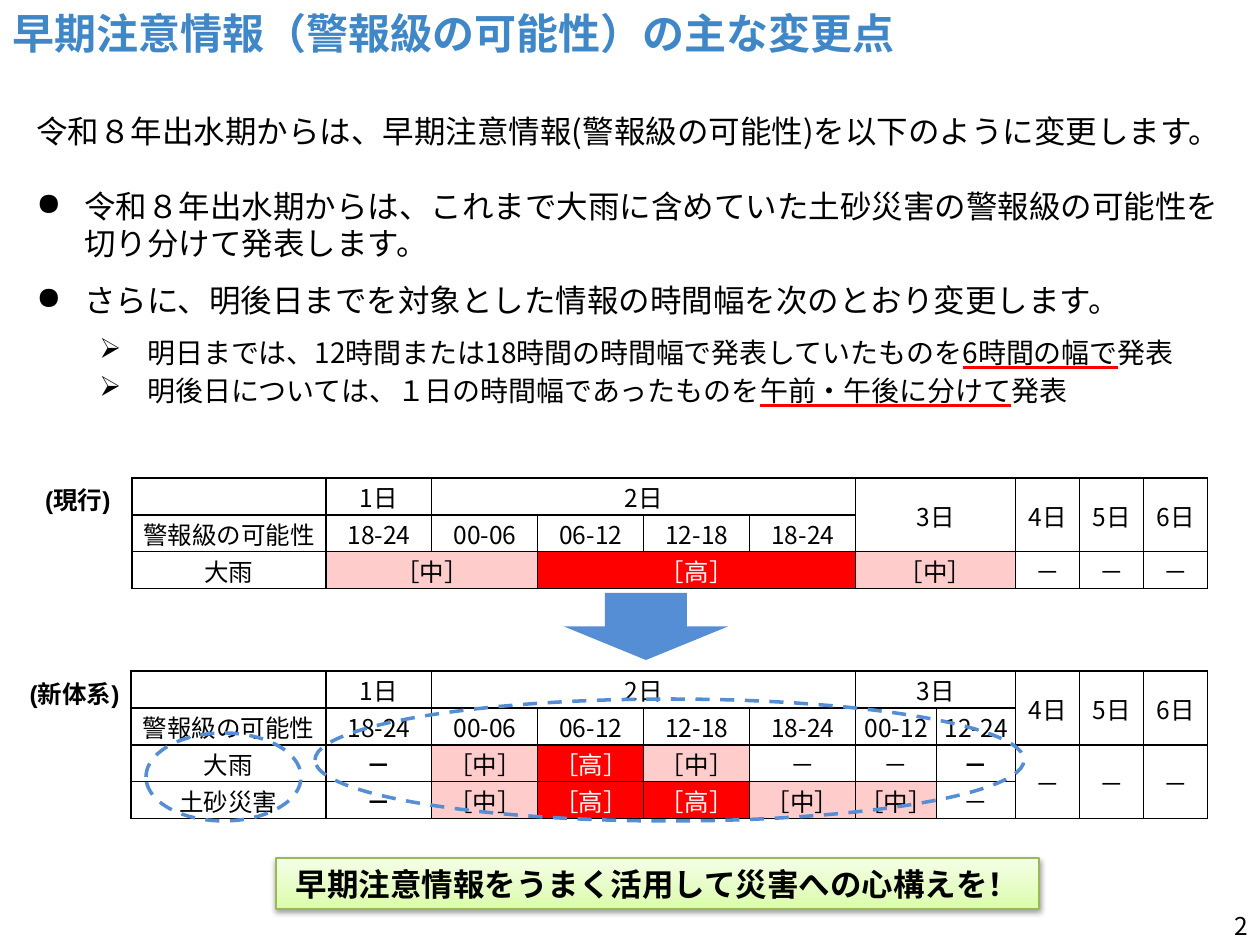
from lxml.etree import SubElement
from pptx import Presentation
from pptx.dml.color import RGBColor
from pptx.enum.dml import MSO_LINE
from pptx.enum.shapes import MSO_SHAPE
from pptx.enum.text import MSO_ANCHOR, MSO_AUTO_SIZE, MSO_UNDERLINE, PP_ALIGN
from pptx.oxml.ns import qn
from pptx.util import Emu, Pt

COLORS = {
    "title": "4087C8", "ink": "000000", "white": "FFFFFF", "blue": "558ED5",
    "red": "FF0000", "pink": "FFCCCC", "edge": "98B955",
}
GREENS = [(0, "DAFDA7"), (35, "E4FCC2"), (100, "F5FFE7")]
LEVELS = {"［中］": ("pink", "ink"), "［高］": ("red", "white")}
FONT = "Noto Sans CJK JP"


def px(n):
    return Emu(round(n * 914400 / 126))


def rgb(name):
    return RGBColor.from_string(COLORS[name])


def sub(node, tag, **attrs):
    return SubElement(node, qn(tag), **attrs)


class Deck:
    def __init__(self):
        self.prs = Presentation()
        self.prs.slide_width, self.prs.slide_height = px(1260), px(945)
        self.slide = self.prs.slides.add_slide(self.prs.slide_layouts[5])

    def run(self, para, text, size, color="ink", bold=False, font=FONT, mark=False):
        run = para.add_run()
        run.text = text
        style = run.font
        style.size, style.bold, style.name = Pt(size), bold, font
        style.color.rgb = rgb(color)
        latin = run._r.rPr.find(qn("a:latin"))
        ea = sub(run._r.rPr, "a:ea", typeface=font)
        latin.addnext(ea)
        if mark:
            style.underline = MSO_UNDERLINE.HEAVY_LINE
            fill = sub(run._r.rPr, "a:uFill")
            sub(sub(fill, "a:solidFill"), "a:srgbClr", val=COLORS["red"])
            latin.addprevious(fill)

    def title(self, text, x, y, w, h):
        box = self.slide.shapes.title
        box.left, box.top, box.width, box.height = map(px, (x, y, w, h))
        frame = box.text_frame
        frame.auto_size = MSO_AUTO_SIZE.NONE
        frame.vertical_anchor = MSO_ANCHOR.MIDDLE
        para = frame.paragraphs[0]
        para.alignment = PP_ALIGN.LEFT
        self.run(para, text, 24, "title", True)

    def box(self, x, y, w, h):
        frame = self.slide.shapes.add_textbox(*map(px, (x, y, w, h))).text_frame
        frame.word_wrap = True
        return frame

    def label(self, text, x, y, w, h, **style):
        para = self.box(x, y, w, h).paragraphs[0]
        para.alignment = PP_ALIGN.RIGHT
        self.run(para, text, 14, **style)

    def body(self, x, y, w, h, items):
        frame = self.box(x, y, w, h)
        for i, (bullet, level, size, gap, runs) in enumerate(items):
            para = frame.add_paragraph() if i else frame.paragraphs[0]
            if bullet:
                props = para._p.get_or_add_pPr()
                props.set("marL", str(px(48 + 63 * level)))
                props.set("indent", str(px(-48)))
                sub(props, "a:buChar", char=bullet)
            para.level = level
            para.line_spacing = Pt(21)
            para.space_before = Pt(gap)
            for text, mark in runs:
                self.run(para, text, size, mark=mark)

    def cell(self, cell, text, bold):
        cell.margin_left = cell.margin_right = cell.margin_top = px(1)
        cell.margin_bottom = 0
        cell.vertical_anchor = MSO_ANCHOR.MIDDLE
        para = cell.text_frame.paragraphs[0]
        para.alignment = PP_ALIGN.CENTER
        fill, ink = LEVELS.get(text, (None, "ink"))
        if text:
            self.run(para, text, 14, ink, bold)
        else:
            sub(para._p, "a:endParaRPr", sz="1400")
        if fill:
            cell.fill.solid()
            cell.fill.fore_color.rgb = rgb(fill)
        else:
            cell.fill.background()
        props = cell._tc.get_or_add_tcPr()
        for i, side in enumerate("LRTB"):
            line = sub(props, "a:ln" + side, w=str(Pt(0.75)))
            sub(sub(line, "a:solidFill"), "a:srgbClr", val=COLORS["ink"])
            props.insert(i, line)

    def table(self, x, y, cols, rows, spans, bold=()):
        frame = self.slide.shapes.add_table(
            len(rows), len(cols), px(x), px(y), px(sum(cols)), px(37 * len(rows)))
        table = frame.table
        table.first_row = table.horz_banding = False
        for col, width in zip(table.columns, cols):
            col.width = px(width)
        for r, row in enumerate(rows):
            table.rows[r].height = px(37)
            for c, text in enumerate(row):
                self.cell(table.cell(r, c), text, (r, c) in bold)
        for top, left, bottom, right in spans:
            table.cell(top, left).merge(table.cell(bottom, right))

    def shape(self, kind, x, y, w, h, fill=None, line=None, width=2, dash=None):
        shape = self.slide.shapes.add_shape(kind, *map(px, (x, y, w, h)))
        shape.shadow.inherit = False
        if fill:
            shape.fill.solid()
            shape.fill.fore_color.rgb = rgb(fill)
        else:
            shape.fill.background()
        if line:
            shape.line.color.rgb = rgb(line)
            shape.line.width = Pt(width)
            shape.line.dash_style = dash
        else:
            shape.line.fill.background()
        return shape

    def banner(self, text, x, y, w, h):
        shape = self.shape(MSO_SHAPE.RECTANGLE, x, y, w, h, line="edge", width=0.75)
        shape.fill.gradient()
        shape.fill.gradient_angle = 90
        props = shape._element.spPr
        stops = props.find(qn("a:gradFill")).find(qn("a:gsLst"))
        for stop in list(stops):
            stops.remove(stop)
        for pos, color in GREENS:
            stop = sub(stops, "a:gs", pos=str(pos * 1000))
            sub(stop, "a:srgbClr", val=color)
        shade = sub(props.find(qn("a:effectLst")), "a:outerShdw", blurRad=str(Pt(3.1)),
                    dist=str(Pt(1.6)), dir="5400000", rotWithShape="0")
        sub(sub(shade, "a:srgbClr", val=COLORS["ink"]), "a:alpha", val="38000")
        frame = shape.text_frame
        frame.word_wrap = True
        frame.vertical_anchor = MSO_ANCHOR.MIDDLE
        para = frame.paragraphs[0]
        para.alignment = PP_ALIGN.CENTER
        self.run(para, text, 18, bold=True)


def main():
    deck = Deck()
    deck.title("早期注意情報（警報級の可能性）の主な変更点", 0, 0, 971, 66)

    # Current and new tables
    days = ["4日", "5日", "6日"]
    hours = ["警報級の可能性", "18-24", "00-06", "06-12", "12-18", "18-24"]
    head = ["", "1日", "2日", "", "", "", "3日"]
    deck.table(132, 478, [194] + [106] * 5 + [160] + [64] * 3, [
        head + days,
        hours + [""] * 4,
        ["大雨", "［中］", "", "［高］", "", "", "［中］"] + ["－"] * 3,
    ], [(0, 2, 0, 5), (2, 1, 2, 2), (2, 3, 2, 5)] + [(0, c, 1, c) for c in range(6, 10)])
    deck.table(131, 671, [195] + [106] * 5 + [81, 79] + [64] * 3, [
        head + [""] + days,
        hours + ["00-12", "12-24"] + [""] * 3,
        ["大雨", "－", "［中］", "［高］", "［中］"] + ["－"] * 6,
        ["土砂災害", "－", "［中］", "［高］", "［高］", "［中］", "［中］", "－"] + [""] * 3,
    ], [(0, 2, 0, 5), (0, 6, 0, 7)]
        + [(r, c, r + 1, c) for r in (0, 2) for c in range(8, 11)],
        bold={(2, 1), (2, 7), (3, 1)})
    deck.label("(現行)", 24, 479, 99, 43, bold=True, font="Arial")
    deck.label("(新体系)", 9, 673, 123, 43, bold=True, font="Arial")

    # Arrow and highlight rings
    deck.shape(MSO_SHAPE.DOWN_ARROW, 564, 593, 164, 67, fill="blue")
    for ring in [(146, 733, 155, 88), (315, 699, 709, 122)]:
        deck.shape(MSO_SHAPE.OVAL, *ring, line="blue", dash=MSO_LINE.DASH)

    # Page number and explanation
    deck.label("2", 966, 905, 294, 33)
    deck.body(24, 107, 1211, 312, [
        ("", 0, 18, 0, [
            ("令和８年出水期からは、早期注意情報(警報級の可能性)を以下のように変更します。", False)]),
        ("●", 0, 18, 22, [
            ("令和８年出水期からは、これまで大雨に含めていた土砂災害の警報級の可能性を"
             "切り分けて発表します。", False)]),
        ("●", 0, 18, 11.5, [
            ("さらに、明後日までを対象とした情報の時間幅を次のとおり変更します。", False)]),
        ("➢", 1, 16, 7.5, [
            ("明日までは、12時間または18時間の時間幅で発表していたものを", False),
            ("6時間の幅で", True), ("発表", False)]),
        ("➢", 1, 16, 1, [
            ("明後日については、１日の時間幅であったものを", False),
            ("午前・午後に分けて", True), ("発表", False)]),
    ])

    # Closing message
    deck.banner("早期注意情報をうまく活用して災害への心構えを！", 276, 858, 763, 51)
    deck.prs.save("out.pptx")


if __name__ == "__main__":
    main()
